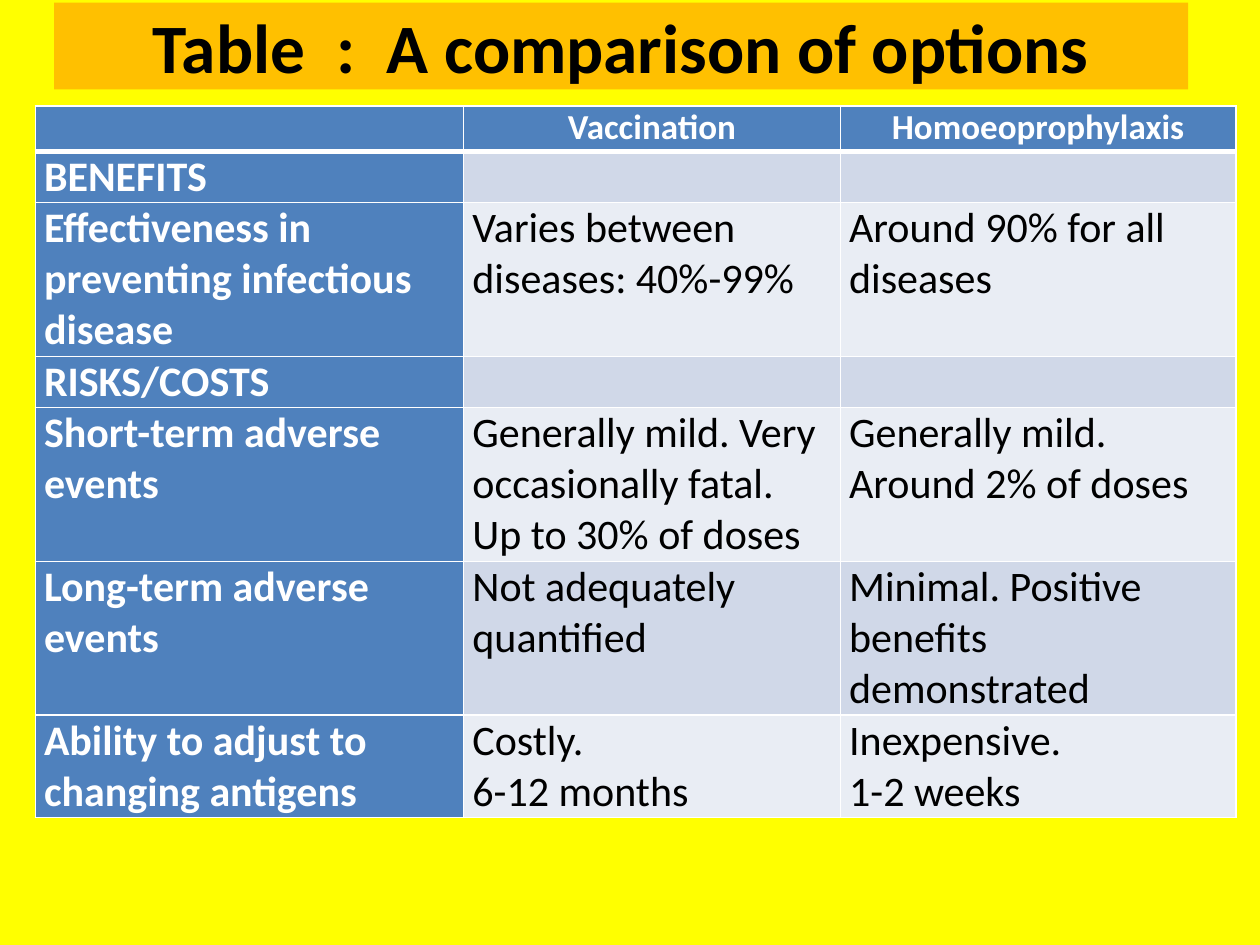
import pptx
import pptx.dml.color
import pptx.enum.shapes
import pptx.enum.text
import pptx.oxml.ns
import pptx.util
from lxml import etree
from pptx.util import Inches

COLORS = {
    "background": "FFFF00",
    "banner": "FFC000",
    "heading": "4F81BD",
    "band_dark": "D0D8E8",
    "band_light": "E9EDF4",
    "light": "FFFFFF",
    "dark": "000000",
}
COLUMN_WIDTHS = [3.4, 2.99, 3.14]
LINE_HEIGHT = 0.36
LINES_PER_ROW = [1, 1, 2, 1, 3, 2, 2]
COMPARISON = [
    ["", "Vaccination", "Homoeoprophylaxis"],
    ["BENEFITS", "", ""],
    ["Effectiveness in preventing infectious disease",
     "Varies between diseases: 40%-99%", "Around 90% for all diseases"],
    ["RISKS/COSTS", "", ""],
    ["Short-term adverse events",
     "Generally mild. Very occasionally fatal. Up to 30% of doses",
     "Generally mild. Around 2% of doses"],
    ["Long-term adverse events", "Not adequately quantified",
     "Minimal. Positive benefits demonstrated"],
    ["Ability to adjust to changing antigens",
     "Costly.\n6-12 months", "Inexpensive.\n1-2 weeks"],
]


class SlideBuilder:
    """Hold the style and the current slide, and add each kind of element."""

    font = "Calibri"

    def __init__(self, slide):
        self.slide = slide
        self.paint(slide.background.fill, "background")

    def paint(self, fill, color):
        fill.solid()
        fill.fore_color.rgb = self.rgb(color)

    def rgb(self, color):
        return pptx.dml.color.RGBColor.from_string(COLORS[color])

    def set_text(self, frame, text, size, color, bold, centered):
        frame.text = text
        align = pptx.enum.text.PP_ALIGN
        for paragraph in frame.paragraphs:
            paragraph.alignment = align.CENTER if centered else align.LEFT
            for run in paragraph.runs:
                run.font.name = self.font
                run.font.size = pptx.util.Pt(size)
                run.font.bold = bold
                run.font.color.rgb = self.rgb(color)

    def banner(self, text, left, top, width, height):
        banner = self.slide.shapes.add_shape(
            pptx.enum.shapes.MSO_SHAPE.RECTANGLE,
            Inches(left), Inches(top), Inches(width), Inches(height))
        banner.shadow.inherit = False
        self.paint(banner.fill, "banner")
        banner.line.fill.background()
        frame = banner.text_frame
        frame.word_wrap = True
        frame.vertical_anchor = pptx.enum.text.MSO_ANCHOR.MIDDLE
        self.set_text(frame, text, 39.6, "dark", True, True)

    def border(self, cell, side, width):
        qn = pptx.oxml.ns.qn
        line = etree.SubElement(cell._tc.get_or_add_tcPr(), qn(f"a:ln{side}"),
                                w=str(pptx.util.Pt(width)))
        fill = etree.SubElement(line, qn("a:solidFill"))
        etree.SubElement(fill, qn("a:srgbClr"), val=COLORS["light"])

    def cell(self, cell, text, row, column):
        is_header, is_heading = row == 0, row == 0 or column == 0
        cell.margin_left = cell.margin_right = Inches(0.07)
        cell.margin_top = cell.margin_bottom = 0
        thick_side = {0: "B", 1: "T"}.get(row)
        for side in "LRTB":
            self.border(cell, side, 3 if side == thick_side else 1)
        band = "band_dark" if row % 2 else "band_light"
        self.paint(cell.fill, "heading" if is_heading else band)
        self.set_text(cell.text_frame, text, 20 if is_header else 24,
                      "light" if is_heading else "dark", is_heading, is_header)

    def table(self, rows, left, top, widths, heights):
        table = self.slide.shapes.add_table(
            len(rows), len(widths), Inches(left), Inches(top),
            Inches(sum(widths)), Inches(sum(heights))).table
        for column, width in zip(table.columns, widths):
            column.width = Inches(width)
        for row, height in zip(table.rows, heights):
            row.height = Inches(height)
        for r, texts in enumerate(rows):
            for c, text in enumerate(texts):
                self.cell(table.cell(r, c), text, r, c)


def main():
    presentation = pptx.Presentation()
    presentation.slide_width = Inches(10)
    presentation.slide_height = Inches(7.5)
    slide = presentation.slides.add_slide(presentation.slide_layouts[6])
    builder = SlideBuilder(slide)
    builder.banner("Table  :  A comparison of options", 0.43, 0.02, 9, 0.69)
    builder.table(COMPARISON, 0.28, 0.84, COLUMN_WIDTHS,
                  [lines * LINE_HEIGHT for lines in LINES_PER_ROW])
    presentation.save("out.pptx")


if __name__ == "__main__":
    main()
